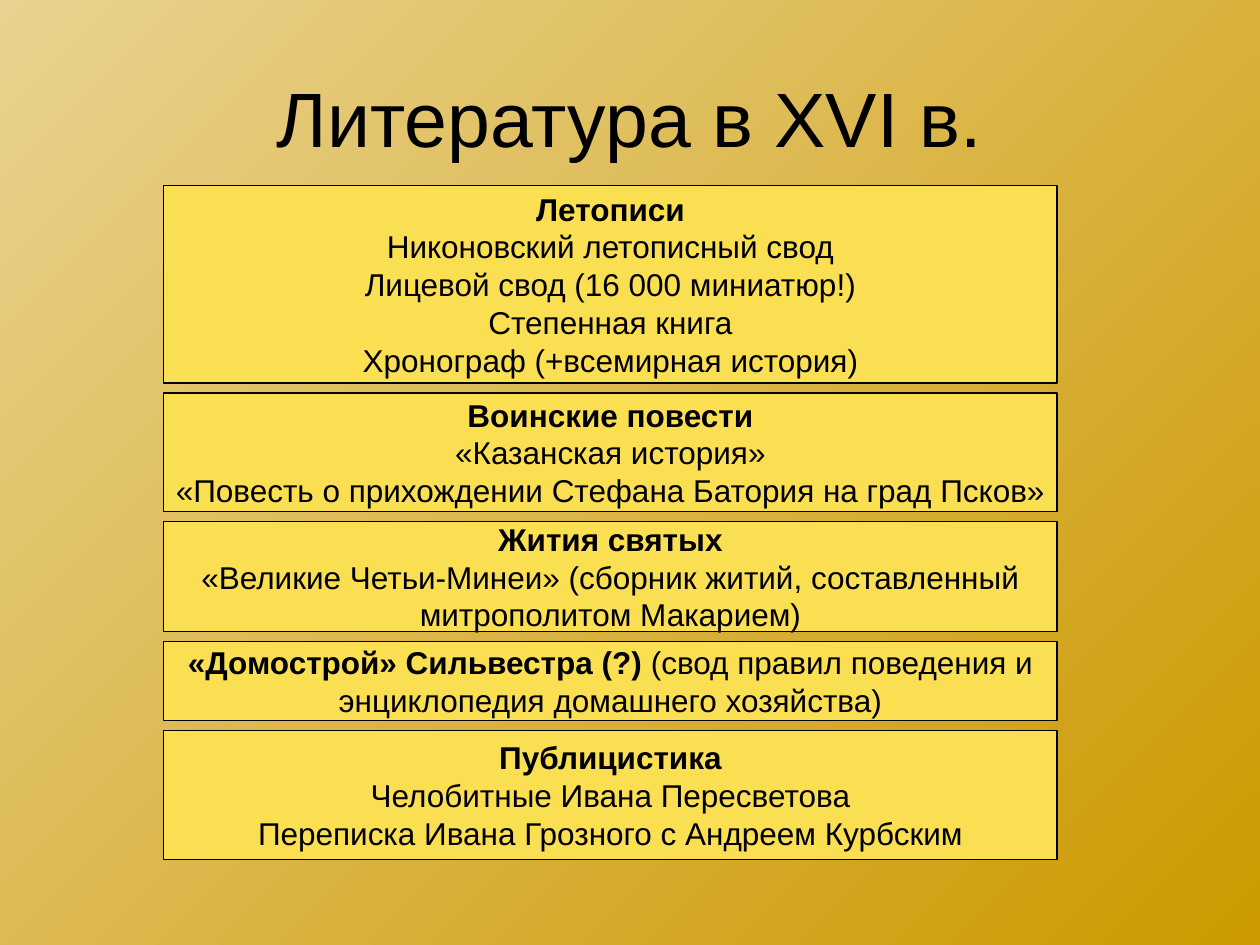
from pptx import Presentation
from pptx.dml.color import RGBColor
from pptx.enum.shapes import MSO_SHAPE
from pptx.enum.text import MSO_ANCHOR, PP_ALIGN
from pptx.util import Inches, Pt

COLORS = {"light": "E9D28F", "dark": "CC9900", "panel": "FBDF53", "ink": "000000"}
FONT = "Arial"
WIDTH, HEIGHT = Inches(10), Inches(7.5)

# Column of panels, in inches
LEFT, TOP, PANEL_WIDTH, GAP = 1.3, 1.47, 7.09, 0.08

# Each genre: panel height, bold heading, rest of the heading line, further lines
GENRES = [
    (1.57, "Летописи", "", [
        "Никоновский летописный свод",
        "Лицевой свод (16 000 миниатюр!)",
        "Степенная книга",
        "Хронограф (+всемирная история)"]),
    (0.94, "Воинские повести", "", [
        "«Казанская история»",
        "«Повесть о прихождении Стефана Батория на град Псков»"]),
    (0.87, "Жития святых", "", [
        "«Великие Четьи-Минеи» (сборник житий, составленный",
        "митрополитом Макарием)"]),
    (0.63, "«Домострой» Сильвестра (?)", " (свод правил поведения и", [
        "энциклопедия домашнего хозяйства)"]),
    (1.02, "Публицистика", "", [
        "Челобитные Ивана Пересветова",
        "Переписка Ивана Грозного с Андреем Курбским"]),
]


def color(name):
    return RGBColor.from_string(COLORS[name])


def style(paragraph, size):
    paragraph.alignment = PP_ALIGN.CENTER
    paragraph.font.name = FONT
    paragraph.font.size = Pt(size)
    paragraph.font.color.rgb = color("ink")


def paint_background(slide):
    fill = slide.background.fill
    fill.gradient()
    fill.gradient_angle = 315  # counter-clockwise: top left to bottom right
    for stop, name in zip(fill.gradient_stops, ("light", "dark")):
        stop.color.rgb = color(name)


def add_title(slide, text):
    title = slide.shapes.add_textbox(
        int(WIDTH * 0.05), int(HEIGHT * 0.04), int(WIDTH * 0.9), Inches(1.25))
    frame = title.text_frame
    frame.word_wrap = True
    frame.vertical_anchor = MSO_ANCHOR.MIDDLE
    frame.text = text
    style(frame.paragraphs[0], 44)


def add_panel(slide, top, height, heading, remark, lines):
    panel = slide.shapes.add_shape(
        MSO_SHAPE.RECTANGLE, Inches(LEFT), Inches(top), Inches(PANEL_WIDTH), Inches(height))
    panel.shadow.inherit = False
    panel.fill.solid()
    panel.fill.fore_color.rgb = color("panel")
    panel.line.color.rgb = color("ink")
    panel.line.width = Pt(0.75)

    frame = panel.text_frame
    frame.word_wrap = False
    frame.vertical_anchor = MSO_ANCHOR.MIDDLE
    frame.text = "\n".join([heading, *lines])
    first = frame.paragraphs[0]
    first.runs[0].font.bold = True
    if remark:
        first.add_run().text = remark
    for paragraph in frame.paragraphs:
        style(paragraph, 18)


def main():
    prs = Presentation()
    prs.slide_width, prs.slide_height = WIDTH, HEIGHT
    slide = prs.slides.add_slide(prs.slide_layouts[6])

    paint_background(slide)
    add_title(slide, "Литература в XVI в.")

    # Genres stacked with equal gaps
    top = TOP
    for height, heading, remark, lines in GENRES:
        add_panel(slide, top, height, heading, remark, lines)
        top += height + GAP

    prs.save("out.pptx")


if __name__ == "__main__":
    main()
